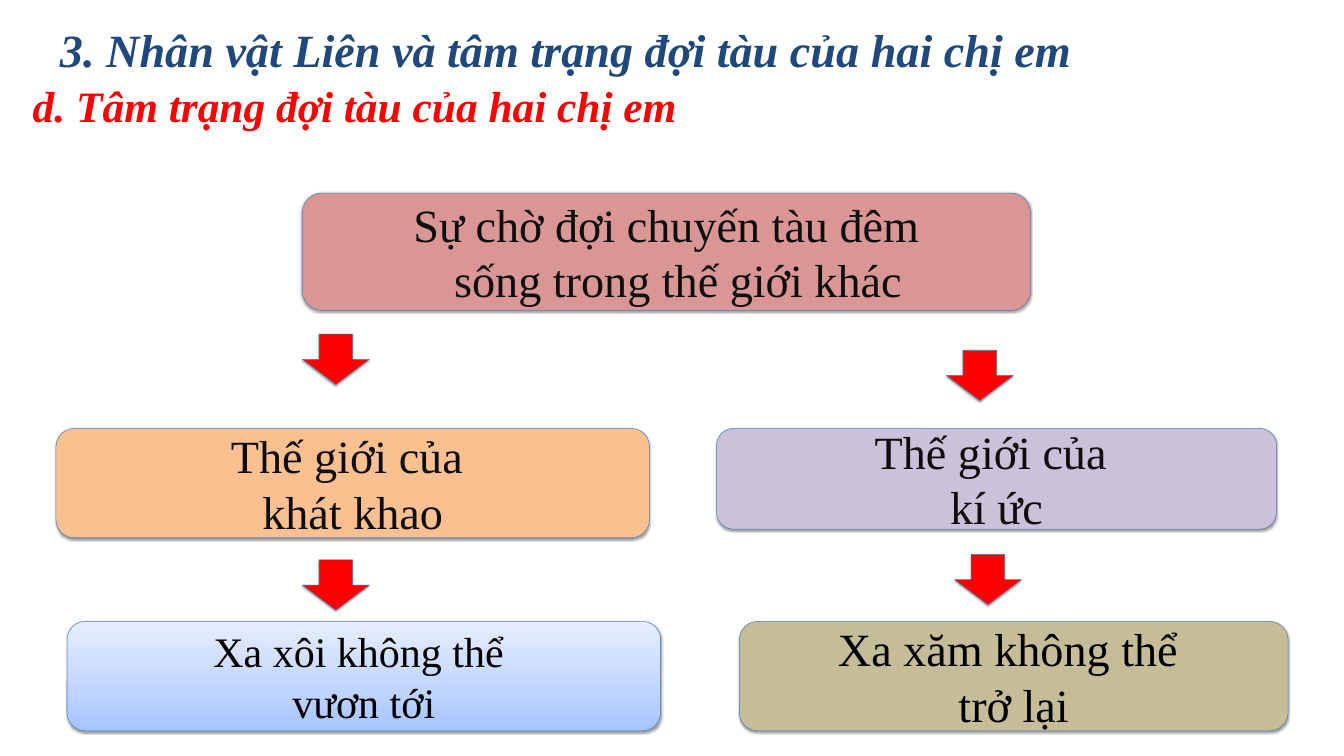
from dataclasses import dataclass

from lxml import etree
from copy import deepcopy
from pptx import Presentation
from pptx import util as u
from pptx.dml.color import RGBColor
from pptx.enum import shapes, text
from pptx.oxml.ns import qn

Inches = u.Inches


@dataclass
class Theme:
    font: str = "Times New Roman"
    head: str = "1F497D"
    red: str = "FF0000"
    ink: str = "0D0D0D"
    black: str = "000000"
    rose: str = "D99694"
    peach: str = "FAC090"
    lilac: str = "CCC1DA"
    sand: str = "C4BD97"
    sky: tuple = ((0, "A4C4FF"), (0.35, "BFD4FF"), (1, "E6EEFF"))
    edge: str = "4B7EBC"
    big: int = 66
    mid: int = 62
    small: int = 60


theme = Theme()


def write(frame, lines, size, color, bold=False, pad=(0.24, 0.12)):
    """Fill a text frame, one paragraph a line, and return the last run."""
    frame.word_wrap = True
    frame.auto_size = text.MSO_AUTO_SIZE.NONE
    frame.margin_left = frame.margin_right = Inches(pad[0])
    frame.margin_top = frame.margin_bottom = Inches(pad[1])
    frame.vertical_anchor = text.MSO_ANCHOR.MIDDLE
    for i, line in enumerate(lines):
        para = frame.paragraphs[0] if i == 0 else frame.add_paragraph()
        para.alignment = text.PP_ALIGN.LEFT if bold else text.PP_ALIGN.CENTER
        run = para.add_run()
        run.text = line
        run.font.name = theme.font
        run.font.size = u.Pt(size)
        run.font.bold = run.font.italic = bold
        run.font.color.rgb = RGBColor.from_string(color)
    return run


def shade(effects):
    """Add a soft shadow, cast straight down, to an effect list."""
    cast = etree.SubElement(effects, qn("a:outerShdw"), blurRad=str(u.Pt(3.1)),
                            dist=str(u.Pt(1.6)), dir="5400000", rotWithShape="0")
    tone = etree.SubElement(cast, qn("a:srgbClr"), val=theme.black)
    etree.SubElement(tone, qn("a:alpha"), val="38000")


deck = Presentation()
deck.slide_width, deck.slide_height = Inches(26.67), Inches(15)
slide = deck.slides.add_slide(deck.slide_layouts[5])

# Headings
title = slide.shapes.title
title.left, title.top = Inches(1.09), Inches(0.37)
title.width, title.height = Inches(24.58), Inches(1.21)
write(title.text_frame, ["3. Nhân vật Liên và tâm trạng đợi tàu của hai chị em"],
      theme.big, theme.head, bold=True, pad=(0.1, 0.05))
title.text_frame.vertical_anchor = text.MSO_ANCHOR.TOP

sub = slide.shapes.add_textbox(Inches(0.41), Inches(1.5), Inches(26.67), Inches(1.17))
run = write(sub.text_frame, ["d. Tâm trạng đợi tàu của hai chị em"],
            theme.mid, theme.red, bold=True)
glow = etree.Element(qn("a:effectLst"))
shade(glow)
run.font._element.find(qn("a:solidFill")).addnext(glow)

# Boxes and block arrows: left, top, width, height, fill, lines, size, ink
boxes = [
    (6, 3.83, 14.45, 2.33, theme.rose,
     ["Sự chờ đợi chuyến tàu đêm", "sống trong thế giới khác"], theme.big, theme.ink),
    (1.11, 8.5, 11.78, 2.17, theme.peach,
     ["Thế giới của ", "khát khao"], theme.big, theme.ink),
    (14.22, 8.5, 11.11, 2, theme.lilac,
     ["Thế giới của ", "kí ức"], theme.big, theme.ink),
    (1.33, 12.33, 11.78, 2.17, theme.sky,
     ["Xa xôi không thể ", "vươn tới"], theme.small, theme.black),
    (14.67, 12.33, 10.89, 2.17, theme.sand,
     ["Xa xăm không thể ", "trở lại"], theme.big, theme.black),
]
arrows = [(x, y, 1.33, 1, theme.red, [], theme.big, theme.ink)
          for x, y in [(6, 6.63), (6, 11.11), (18.78, 6.95), (18.94, 11)]]

kinds = shapes.MSO_SHAPE
made = []
for left, top, wide, high, fill, lines, size, ink in boxes + arrows:
    kind = kinds.ROUNDED_RECTANGLE if lines else kinds.DOWN_ARROW
    shape = slide.shapes.add_shape(kind, Inches(left), Inches(top),
                                   Inches(wide), Inches(high))
    if fill == theme.sky:
        shape.fill.gradient()
        shape.fill.gradient_angle = 90
        stops = shape._element.spPr.find(qn("a:gradFill")).find(qn("a:gsLst"))
        stops.append(deepcopy(stops[0]))
        for stop, (place, color) in zip(shape.fill.gradient_stops, fill):
            stop.position = place
            stop.color.rgb = RGBColor.from_string(color)
    else:
        shape.fill.solid()
        shape.fill.fore_color.rgb = RGBColor.from_string(fill)
    shape.line.color.rgb = RGBColor.from_string(theme.edge)
    shape.line.width = u.Pt(0.75)
    shape.shadow.inherit = False
    shade(shape._element.spPr.find(qn("a:effectLst")))
    if lines:
        write(shape.text_frame, lines, size, ink)
    made.append(shape)

# The second line of the top box sits a little to the right
lower = made[0].text_frame.paragraphs[1]
lower._p.get_or_add_pPr().set("marL", str(Inches(0.46)))

deck.save("out.pptx")
